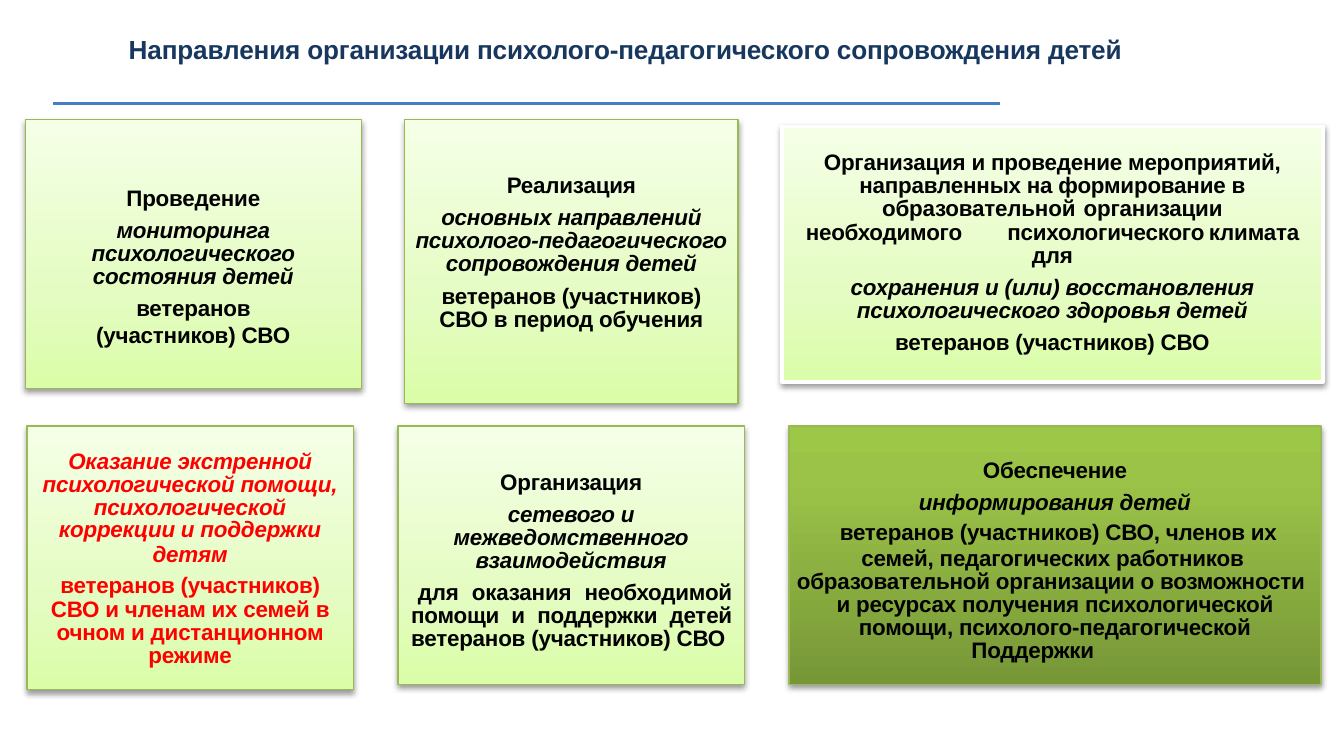
import copy
from dataclasses import dataclass

import lxml.etree
import pptx
import pptx.dml.color
import pptx.enum.shapes
import pptx.enum.text
import pptx.oxml.ns
import pptx.util
from pptx.util import Cm, Pt

ALIGN = pptx.enum.text.PP_ALIGN
FONT = "Arial"
LIGHT = [(0, "DAFDA7"), (0.35, "E4FCC2"), (1, "F5FFE7")]
DARK = [(0, "779737"), (0.8, "9BC348"), (1, "9DC746")]
GREEN, WHITE, BLACK, RED = "98B955", "FFFFFF", "000000", "FF0000"
TIGHT = 0.86
TOP_ROW, BOTTOM_ROW = 2.26, 8.05
VETERANS = "ветеранов (участников) СВО"


@dataclass
class Para:
    """One paragraph: indents and tabs in cm, space before in points."""
    text: str
    italic: bool = False
    before: float = 0
    line: object = 1.0
    left: float = 0
    right: float = 0
    first: float = 0
    align: object = ALIGN.CENTER
    tabs: tuple = ()


def rgb(color):
    return pptx.dml.color.RGBColor.from_string(color)


def add_xml(parent, tag, **attrs):
    child = lxml.etree.SubElement(parent, pptx.oxml.ns.qn(tag))
    for name, value in attrs.items():
        child.set(name, str(value))
    return child


def add_run(p, text, size, color, italic=False):
    r = p.add_run()
    r.text = text
    font = r.font
    font.name, font.size, font.bold, font.italic = FONT, Pt(size), True, italic
    font.color.rgb = rgb(color)
    r._r.get_or_add_rPr().set("spc", "-10")


def format_paragraph(p, para):
    p.alignment = para.align
    p.line_spacing = para.line
    p.space_before = Pt(para.before)
    pPr = p._p.get_or_add_pPr()
    pPr.set("marL", str(Cm(para.left)))
    pPr.set("marR", str(Cm(para.right)))
    pPr.set("indent", str(Cm(para.first)))
    if para.tabs:
        tab_list = add_xml(pPr, "a:tabLst")
        for pos in para.tabs:
            add_xml(tab_list, "a:tab", pos=Cm(pos), algn="l")


def set_frame(tf, top):
    tf.word_wrap = True
    tf.auto_size = pptx.enum.text.MSO_AUTO_SIZE.NONE
    tf.vertical_anchor = pptx.enum.text.MSO_ANCHOR.TOP
    tf.margin_left = tf.margin_right = tf.margin_bottom = 0
    tf.margin_top = Cm(top)


def fill_gradient(sp, stops):
    """Fill from bottom to top with three (position, colour) stops."""
    sp.fill.gradient()
    sp.fill.gradient_angle = 90
    gs_list = sp._element.spPr.find(".//" + pptx.oxml.ns.qn("a:gsLst"))
    gs_list.append(copy.deepcopy(gs_list[0]))
    for stop, (position, color) in zip(sp.fill.gradient_stops, stops):
        stop.position = position
        stop.color.rgb = rgb(color)


def add_shadow(sp):
    sp.shadow.inherit = False
    effects = sp._element.spPr.find(pptx.oxml.ns.qn("a:effectLst"))
    shadow = add_xml(effects, "a:outerShdw", blurRad=Pt(3.1), dist=Pt(1.6),
                     dir=5400000, algn="ctr", rotWithShape=0)
    add_xml(add_xml(shadow, "a:srgbClr", val=BLACK), "a:alpha", val=38000)


def add_box(s, place, top, paras, color=BLACK, stops=LIGHT, line=(GREEN, 0.75)):
    sp = s.shapes.add_shape(pptx.enum.shapes.MSO_SHAPE.RECTANGLE, *map(Cm, place))
    fill_gradient(sp, stops)
    sp.line.color.rgb = rgb(line[0])
    sp.line.width = Pt(line[1])
    add_shadow(sp)
    tf = sp.text_frame
    set_frame(tf, top)
    for i, para in enumerate(paras):
        p = tf.add_paragraph() if i else tf.paragraphs[0]
        format_paragraph(p, para)
        add_run(p, para.text, 12, color, para.italic)


def add_title(s, text):
    sp = s.shapes.title
    sp.left, sp.top, sp.width, sp.height = Cm(0.79), Cm(0.48), Cm(21.67), Cm(0.76)
    set_frame(sp.text_frame, 0.15)
    p = sp.text_frame.paragraphs[0]
    format_paragraph(p, Para(text, before=1.1, left=0.38))
    add_run(p, text, 14, "17375E")


def add_rule(s):
    line = s.shapes.add_connector(pptx.enum.shapes.MSO_CONNECTOR.STRAIGHT,
                                  Cm(1), Cm(1.95), Cm(18.9), Cm(1.95))
    line.line.color.rgb = rgb("4480C2")
    line.line.width = Pt(1.5)
    add_xml(line._element.spPr, "a:effectLst")


def add_top_row(s):
    add_box(s, (14.78, 2.39, 10.22, 4.83), 0.48, [
        Para("Организация и проведение мероприятий, направленных на формирование в "
             "образовательной\tорганизации",
             line=TIGHT, left=0.6, right=0.6, tabs=(4.9,)),
        Para("необходимого\tпсихологического\tклимата для",
             line=Pt(12.5), left=0.38, right=0.38, tabs=(3.86, 8.13)),
        Para("сохранения и (или) восстановления психологического здоровья детей",
             True, 4.6, Pt(12.5), 0.6, 0.6),
        Para(VETERANS, before=2.8),
    ], line=(WHITE, 2))
    add_box(s, (0.48, TOP_ROW, 6.35, 5.08), 1.21, [
        Para("Проведение"),
        Para("мониторинга психологического состояния детей", True, 4.8, TIGHT, 1, 1),
        Para(VETERANS, before=2.9, left=1, right=1),
    ])
    add_box(s, (7.65, TOP_ROW, 6.3, 5.36), 0.97, [
        Para("Реализация"),
        Para("основных направлений психолого-педагогического сопровождения детей",
             True, 4.9, TIGHT, 0.1, 0.1),
        Para(VETERANS + " в период обучения", False, 4.9, Pt(12.5), 0.4, 0.4),
    ])


def add_bottom_row(s):
    add_box(s, (0.51, BOTTOM_ROW, 6.17, 4.98), 0.46, [
        Para("Оказание экстренной психологической помощи, психологической",
             True, 0, TIGHT, 0.2, 0.2),
        Para("коррекции и поддержки", True, line=Pt(11.6)),
        Para("детям", True, line=Pt(13.4)),
        Para(VETERANS + " и членам их семей в очном и дистанционном режиме",
             False, 4.7, TIGHT, 0.2, 0.2),
    ], color=RED)
    add_box(s, (7.52, BOTTOM_ROW, 6.55, 4.88), 0.79, [
        Para("Организация"),
        Para("сетевого и межведомственного взаимодействия", True, 4.8, TIGHT, 0.3, 0.3),
        Para("для оказания необходимой помощи и поддержки детей " + VETERANS,
             False, 4.8, TIGHT, 0.25, 0.23, 0.13, ALIGN.JUSTIFY),
    ])
    add_box(s, (14.91, BOTTOM_ROW, 10.06, 4.88), 0.56, [
        Para("Обеспечение"),
        Para("информирования детей", True, 2.9),
        Para(VETERANS + ", членов их", False, 2.9, Pt(13.4), 0.13),
        Para("семей, педагогических работников образовательной организации "
             "о возможности", False, 1, Pt(12.5), 0.15, 0, 1.22, ALIGN.LEFT),
        Para("и ресурсах получения психологической помощи, "
             "психолого-педагогической", False, 0.1, Pt(12.4), 0.4, 0.4),
        Para("Поддержки", line=Pt(12.3), right=0.84),
    ], stops=DARK)


def main():
    prs = pptx.Presentation()
    prs.slide_width, prs.slide_height = Cm(25.4), Cm(14.28)
    s = prs.slides.add_slide(prs.slide_layouts[5])
    add_title(s, "Направления организации психолого-педагогического сопровождения детей")
    add_rule(s)
    add_top_row(s)
    add_bottom_row(s)
    prs.save("out.pptx")


if __name__ == "__main__":
    main()
